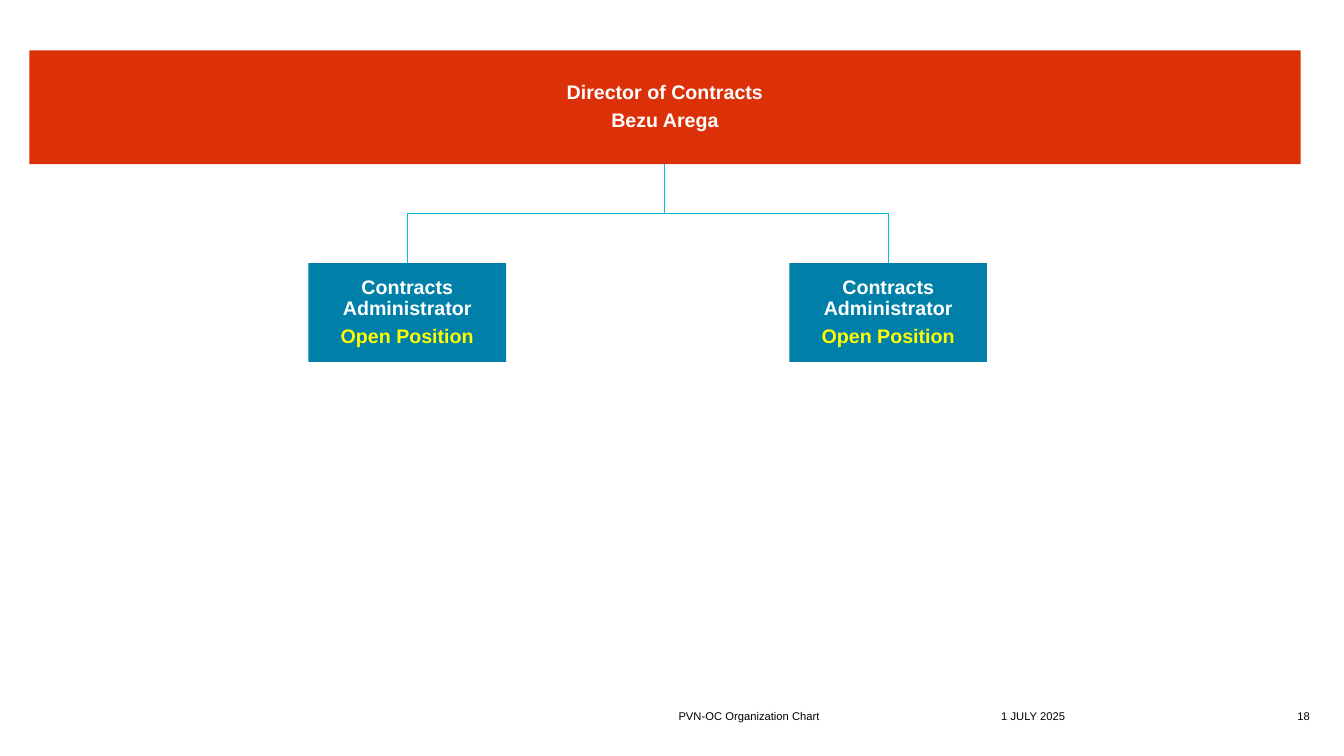
from dataclasses import dataclass

from lxml import etree
from pptx import Presentation
from pptx.dml.color import RGBColor
from pptx.enum import shapes, text
from pptx.oxml import ns
from pptx.util import Inches, Pt

DIRECTOR = ["Director of Contracts", "Bezu Arega"]
REPORTS = [
    ["Contracts Administrator", "Open Position"],
    ["Contracts Administrator", "Open Position"],
]
FOOTERS = [  # text, left, width, alignment
    ("PVN-OC Organization Chart", 6.73, 3.06, text.PP_ALIGN.LEFT),
    ("1 JULY 2025", 9.93, 1.99, text.PP_ALIGN.LEFT),
    ("18", 12.54, 0.45, text.PP_ALIGN.RIGHT),
]


@dataclass(frozen=True)
class Theme:
    font: str = "Arial"
    banner: str = "DC3009"
    report: str = "0080A8"
    link: str = "05BFE0"
    light: str = "FFFFFF"
    vacancy: str = "FFFF00"
    dark: str = "000000"
    box_size: float = 14
    footer_size: float = 8


THEME = Theme()
WIDTH, HEIGHT = 13.33, 7.5
BANNER = (0.29, 0.5, 12.61, 1.13)
REPORT_LEFT, REPORT_TOP, REPORT_STEP = 3.06, 2.61, 4.77
REPORT_WIDTH, REPORT_HEIGHT = 1.96, 0.98
FOOTER_TOP, FOOTER_HEIGHT = 6.95, 0.22


def set_frame(frame, inset, anchor):
    frame.word_wrap = True
    frame.vertical_anchor = anchor
    frame.margin_left = frame.margin_right = Inches(inset)
    frame.margin_top = frame.margin_bottom = Inches(inset)


def add_run(paragraph, words, size, color, bold=False):
    run = paragraph.add_run()
    run.text = words
    run.font.name = THEME.font
    run.font.size = Pt(size)
    run.font.bold = bold
    run.font.color.rgb = RGBColor.from_string(color)


def add_box(slide, bounds, fill, lines, colors):
    shape = slide.shapes.add_shape(
        shapes.MSO_SHAPE.RECTANGLE, *(Inches(length) for length in bounds))
    shape.shadow.inherit = False
    shape.fill.solid()
    shape.fill.fore_color.rgb = RGBColor.from_string(fill)
    shape.line.fill.background()
    frame = shape.text_frame
    set_frame(frame, 0.01, text.MSO_ANCHOR.MIDDLE)
    for index, (words, color) in enumerate(zip(lines, colors)):
        paragraph = frame.add_paragraph() if index else frame.paragraphs[0]
        paragraph.alignment = text.PP_ALIGN.CENTER
        paragraph.line_spacing = 0.9
        if index:
            paragraph.space_before = Pt(4.9)
        add_run(paragraph, words, THEME.box_size, color, bold=True)


def add_link(slide, start, end):
    """Elbow that leaves downwards: a sideways elbow turned a quarter about its centre."""
    (x1, y1), (x2, y2) = start, end
    middle_x, middle_y = (x1 + x2) / 2, (y1 + y2) / 2
    half_width, half_height = (y2 - y1) / 2, abs(x2 - x1) / 2
    side = 1 if x2 < x1 else -1
    link = slide.shapes.add_connector(
        shapes.MSO_CONNECTOR.ELBOW,
        Inches(middle_x - side * half_width), Inches(middle_y - half_height),
        Inches(middle_x + side * half_width), Inches(middle_y + half_height))
    link.line.color.rgb = RGBColor.from_string(THEME.link)
    link.line.width = Pt(0.75)
    properties = link._element.spPr
    properties.find(ns.qn("a:xfrm")).set("rot", str(side * 90 % 360 * 60000))
    etree.SubElement(properties, ns.qn("a:effectLst"))


def add_footer(slide, words, left, width, alignment):
    box = slide.shapes.add_textbox(
        Inches(left), Inches(FOOTER_TOP), Inches(width), Inches(FOOTER_HEIGHT))
    set_frame(box.text_frame, 0, text.MSO_ANCHOR.BOTTOM)
    paragraph = box.text_frame.paragraphs[0]
    paragraph.alignment = alignment
    add_run(paragraph, words, THEME.footer_size, THEME.dark)


def main():
    presentation = Presentation()
    presentation.slide_width = Inches(WIDTH)
    presentation.slide_height = Inches(HEIGHT)
    slide = presentation.slides.add_slide(presentation.slide_layouts[6])

    add_box(slide, BANNER, THEME.banner, DIRECTOR, [THEME.light, THEME.light])
    left, top, width, height = BANNER
    banner_foot = (left + width / 2, top + height)
    for column, lines in enumerate(REPORTS):
        report_left = REPORT_LEFT + column * REPORT_STEP
        add_box(slide, (report_left, REPORT_TOP, REPORT_WIDTH, REPORT_HEIGHT),
                THEME.report, lines, [THEME.light, THEME.vacancy])
        add_link(slide, banner_foot, (report_left + REPORT_WIDTH / 2, REPORT_TOP))
    for footer in FOOTERS:
        add_footer(slide, *footer)

    presentation.save("out.pptx")


if __name__ == "__main__":
    main()
